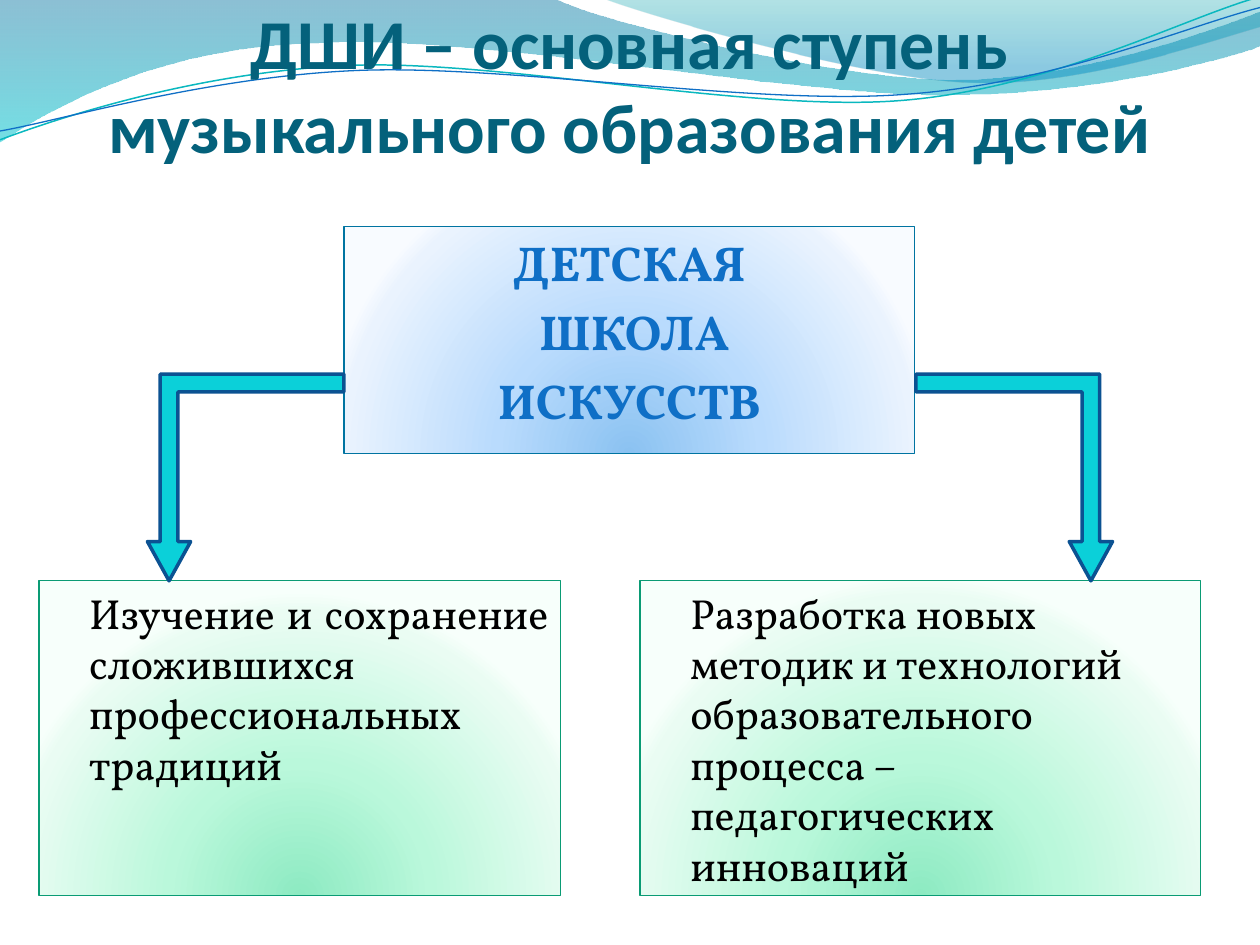
from lxml import etree
from pptx import Presentation
from pptx.dml.color import RGBColor
from pptx.enum import shapes, text
from pptx.oxml import ns, parse_xml
from pptx.util import Inches, Pt


def rgb(code):
    return RGBColor.from_string(code)


def shade(shape, stops, kind):
    """Fill with (position, colour, opacity) stops; kind is the XML for the direction."""
    shape.fill.gradient()
    marks = "".join(
        f'<a:gs pos="{pos * 1000}"><a:srgbClr val="{tone}">'
        f'<a:alpha val="{alpha * 1000}"/></a:srgbClr></a:gs>'
        for pos, tone, alpha in stops)
    props = shape._element.spPr
    props.replace(props.find(ns.qn("a:gradFill")), parse_xml(
        f'<a:gradFill {ns.nsdecls("a")} rotWithShape="1">'
        f'<a:gsLst>{marks}</a:gsLst>{kind}</a:gradFill>'))


DOWN = '<a:lin ang="5400000" scaled="0"/>'
GLOW = ('<a:path path="circle"><a:fillToRect l="50000" t="130000" '
        'r="50000" b="-30000"/></a:path>')

deck = Presentation()
deck.slide_width, deck.slide_height = Inches(10), Inches(7.5)
slide = deck.slides.add_slide(deck.slide_layouts[6])
items = slide.shapes

# Waves: two numbers end a line, six give a Bézier curve
waves = [
    ([(0, 0), (4.4, -0.01), (4.76, 0.17, 6.64, 0.63, 7.58, 0.63),
      (8.53, 0.63, 9.58, 0.26, 10, 0.09), (10.01, 0.36),
      (9.83, 0.44, 8.7, 0.76, 7.46, 0.75), (6.22, 0.75, 3.82, 0.28, 2.57, 0.34),
      (1.29, 0.36, 0.46, 0.83, -0.01, 1.13), (0, 0)],
     [(0, "0074A1", 45), (100, "00C6CF", 55)], None),
    ([(4.79, -0.01), (5.09, 0.11, 6.82, 0.62, 7.69, 0.65),
      (8.56, 0.69, 9.61, 0.32, 10, 0.21), (10, 0), (4.79, -0.01)],
     [(0, "00A1A9", 30), (80, "008BBF", 45)], None),
    ([(0, 1.11), (0.48, 0.93, 1.58, 0.57, 2.77, 0.52),
      (3.95, 0.47, 5.93, 0.89, 7.13, 0.8), (8.33, 0.71, 9.38, 0.15, 9.98, -0.02)],
     None, ("0AB8BF", 0.85)),
    ([(0, 1.04), (0.47, 0.96, 1.64, 0.61, 2.83, 0.56),
      (4.03, 0.51, 5.97, 0.84, 7.17, 0.75), (8.36, 0.67, 9.41, 0.21, 10, 0.06)],
     None, ("0F6FC6", 0.75)),
]
for route, stops, line in waves:
    ends = [tuple(map(Inches, part[-2:])) for part in route]
    pen = items.build_freeform(*ends[0])
    pen.add_line_segments(ends[1:], close=bool(stops))
    wave = pen.convert_to_shape()
    wave.shadow.inherit = False
    legs = list(wave._element.spPr.iter(ns.qn("a:lnTo")))
    for leg, part in zip(legs, route[1:]):
        if len(part) == 6:
            leg.tag = ns.qn("a:cubicBezTo")
            for spot in (0, 2):
                knot = etree.Element(ns.qn("a:pt"),
                                     x=str(Inches(part[spot]) - wave.left),
                                     y=str(Inches(part[spot + 1]) - wave.top))
                leg.insert(spot // 2, knot)
    if stops:
        shade(wave, stops, DOWN)
        wave.line.fill.background()
    else:
        wave.fill.background()
        wave.line.color.rgb = rgb(line[0])
        wave.line.width = Pt(line[1])

# Title
title = items.add_textbox(Inches(0.23), Inches(0.77), Inches(9.53), Inches(0.56))
frame = title.text_frame
frame.word_wrap = True
frame.vertical_anchor = text.MSO_ANCHOR.BOTTOM
frame.margin_left = frame.margin_right = frame.margin_bottom = 0
para = frame.paragraphs[0]
para.alignment = text.PP_ALIGN.CENTER
run = para.add_run()
run.text = "ДШИ – основная ступень музыкального образования детей"
run.font.name, run.font.size, run.font.bold = "Calibri", Pt(40), True
run.font.color.rgb = rgb("04617B")

# Boxes
blue = (["8BC2F1", "B9DBFD", "EAF3FE", "F8FBFF"], "0074A1")
green = (["8DEAC2", "BAF8DB", "EAFCF3", "F7FFFB"], "0A9B74")
boxes = [
    ((2.73, 1.8, 4.53, 1.8), blue, text.PP_ALIGN.CENTER, 28, "0F6FC6", True,
     ["ДЕТСКАЯ", " ШКОЛА", "ИСКУССТВ"]),
    ((0.31, 4.61, 4.14, 2.5), green, text.PP_ALIGN.JUSTIFY, 24, "000000", False,
     ["\tИзучение и сохранение сложившихся профессиональных традиций"]),
    ((5.08, 4.61, 4.45, 2.5), green, text.PP_ALIGN.LEFT, 24, "000000", False,
     ["\tРазработка новых методик и технологий образовательного процесса – "
      "педагогических инноваций"]),
]
for place, (tones, edge), align, size, ink, bold, lines in boxes:
    box = items.add_shape(shapes.MSO_SHAPE.RECTANGLE, *map(Inches, place))
    shade(box, [(pos, tone, 100) for pos, tone in zip((0, 43, 93, 100), tones)], GLOW)
    box.line.color.rgb = rgb(edge)
    box.line.width = Pt(0.75)
    box.shadow.inherit = False
    frame = box.text_frame
    frame.word_wrap = True
    frame.vertical_anchor = text.MSO_ANCHOR.TOP
    for row, words in enumerate(lines):
        para = frame.add_paragraph() if row else frame.paragraphs[0]
        para.alignment = align
        props = para._p.get_or_add_pPr()
        props.set("marL", str(Inches(0.3)))
        props.set("indent", str(Inches(-0.3)))
        if row:
            para.space_before = Pt(size * 0.2)
        run = para.add_run()
        run.text = words
        run.font.name, run.font.size, run.font.bold = "Vollkorn", Pt(size), bold
        run.font.color.rgb = rgb(ink)

# Arrows from the school to both tasks
for left, flip in ((1.17, False), (7.27, True)):
    arrow = items.add_shape(shapes.MSO_SHAPE.BENT_UP_ARROW, Inches(left),
                            Inches(2.97), Inches(1.56), Inches(1.64))
    arrow.rotation = 180
    if flip:
        arrow._element.spPr.find(ns.qn("a:xfrm")).set("flipH", "1")
    for spot, share in enumerate((0.09, 0.11, 0.2)):
        arrow.adjustments[spot] = share
    arrow.shadow.inherit = False
    arrow.fill.solid()
    arrow.fill.fore_color.rgb = rgb("0BD0D9")
    arrow.line.color.rgb = rgb("0B5292")
    arrow.line.width = Pt(2)

deck.save("out.pptx")
